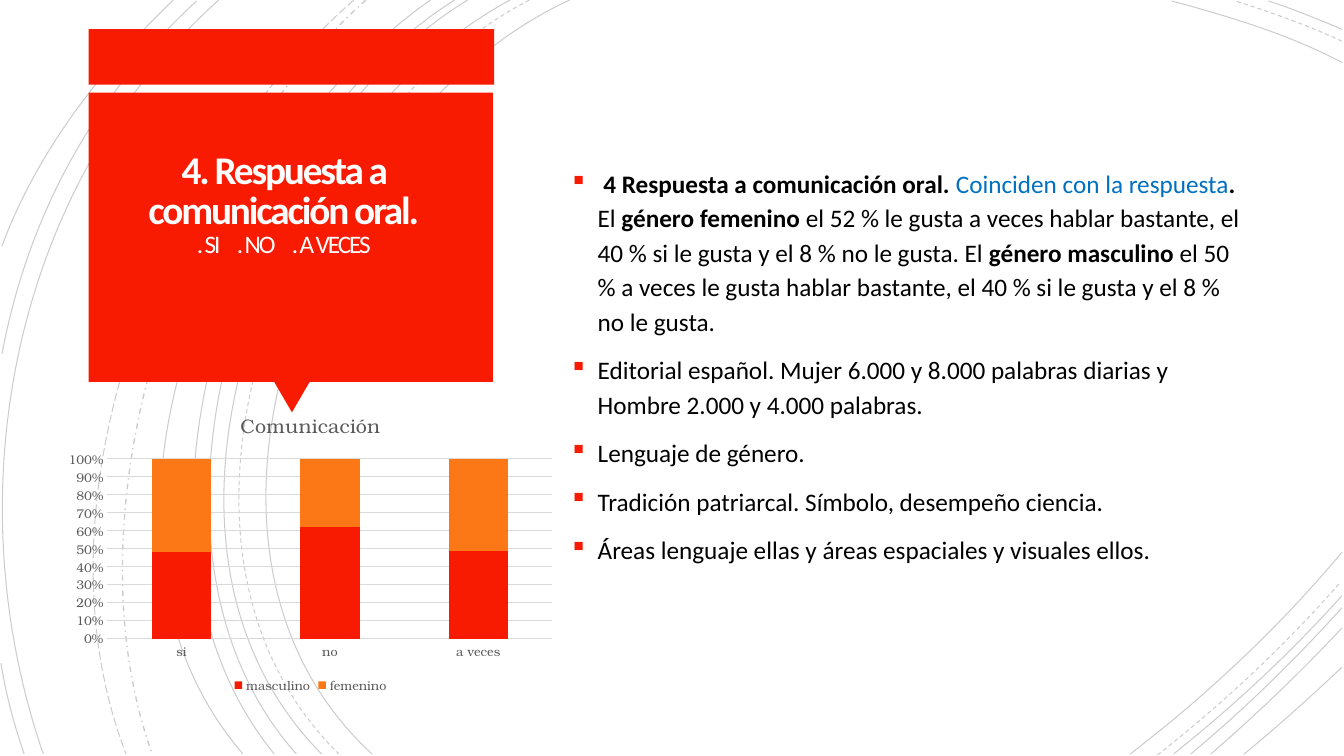
"""Build the slide on answers about oral communication by gender."""
import pptx
import pptx.chart.data
import pptx.dml.color
import pptx.enum.chart
import pptx.enum.dml
import pptx.enum.shapes
import pptx.enum.text
import pptx.util
from lxml import etree
from pptx.oxml.ns import qn

PX = 9144
RED, ORANGE, GREY, RULE, BLACK = "F81B02", "FC7715", "595959", "D9D9D9", "000000"
SERIF = "TeX Gyre Bonum"


def color(code):
    return pptx.dml.color.RGBColor.from_string(code)


def add_run(paragraph, text, size, code, bold, spacing=0):
    run = paragraph.add_run()
    run.text = text
    run.font.name = "Calibri"
    run.font.size = pptx.util.Pt(size)
    run.font.color.rgb = color(code)
    run.font.bold = bold
    if spacing:
        run.font._element.set("spc", str(spacing))


presentation = pptx.Presentation()
presentation.slide_width = 1333 * PX
presentation.slide_height = 750 * PX
slide = presentation.slides.add_slide(presentation.slide_layouts[6])
shapes = slide.shapes

DASH = pptx.enum.dml.MSO_LINE
arcs = [
    ((565, 0), (315, 115), (143, 540), (369, 748), DASH.SOLID),
    ((1331, 62), (1278, 34), (1218, 16), (1162, 1), DASH.SOLID),
    ((1121, 748), (1197, 690), (1269, 622), (1331, 548), DASH.SOLID),
    ((525, 0), (285, 125), (123, 537), (336, 748), DASH.DASH),
    ((1331, 41), (1297, 25), (1260, 12), (1225, 1), DASH.DASH),
    ((1148, 749), (1213, 698), (1275, 640), (1330, 577), DASH.DASH),
    ((506, 0), (270, 127), (110, 537), (319, 748), DASH.SOLID),
    ((1331, 29), (1307, 19), (1283, 9), (1258, 1), DASH.SOLID),
    ((1164, 748), (1223, 701), (1280, 648), (1331, 591), DASH.SOLID),
    ((464, 0), (244, 133), (110, 541), (294, 748), DASH.SOLID),
    ((1181, 748), (1234, 704), (1284, 655), (1331, 603), DASH.SOLID),
    ((451, 0), (231, 138), (97, 533), (272, 748), DASH.SOLID),
    ((1201, 748), (1246, 709), (1290, 667), (1331, 623), DASH.SOLID),
    ((427, 0), (217, 147), (53, 529), (241, 748), DASH.SOLID),
    ((1234, 748), (1267, 721), (1299, 692), (1331, 662), DASH.SOLID),
    ((363, 0), (176, 166), (65, 509), (151, 748), DASH.DASH_DOT),
    ((351, 0), (157, 169), (29, 499), (125, 748), DASH.LONG_DASH),
    ((217, 0), (11, 185), (-46, 490), (43, 748), DASH.SOLID),
    ((195, 1), (92, 96), (28, 214), (2, 351), DASH.SOLID),
    ((1, 658), (6, 689), (14, 719), (24, 748), DASH.SOLID),
    ((172, 0), (100, 69), (37, 150), (2, 244), DASH.SOLID),
]
for start, pull_out, pull_in, end, dash in arcs:
    builder = shapes.build_freeform(*start, scale=PX)
    builder.add_line_segments((pull_out, pull_in, end), close=False)
    arc = builder.convert_to_shape()
    segments = list(arc._element.iter(qn("a:lnTo")))
    curve = etree.SubElement(segments[0].getparent(), qn("a:cubicBezTo"))
    for segment in segments:
        curve.append(segment[0])
        segment.getparent().remove(segment)
    arc.shadow.inherit = False
    arc.fill.background()
    arc.line.color.rgb = color(BLACK)
    arc.line.width = pptx.util.Pt(1 if dash == DASH.DASH_DOT else 0.75)
    arc.line.dash_style = dash
    ink = arc.line._ln.find(".//" + qn("a:srgbClr"))
    etree.SubElement(ink, qn("a:alpha"), val="20000")

PRESET = pptx.enum.shapes.MSO_SHAPE
for preset, left, top, width, height, turn in (
    (PRESET.RECTANGLE, 88, 29, 402, 55, 0),
    (PRESET.ISOSCELES_TRIANGLE, 272, 379, 35, 30, 180),
    (PRESET.RECTANGLE, 88, 92, 401, 287, 0),
):
    banner = shapes.add_shape(preset, left * PX, top * PX, width * PX, height * PX)
    banner.rotation = turn
    banner.shadow.inherit = False
    banner.fill.solid()
    banner.fill.fore_color.rgb = color(RED)
    banner.line.fill.background()

MIDDLE = pptx.enum.text.MSO_ANCHOR.MIDDLE
heading = shapes.add_textbox(90 * PX, 93 * PX, 383 * PX, 269 * PX).text_frame
heading.word_wrap = True
heading.vertical_anchor = MIDDLE
heading.margin_left = heading.margin_right = heading.margin_top = 25 * PX
heading.margin_bottom = 72 * PX
question = heading.paragraphs[0]
question.alignment = pptx.enum.text.PP_ALIGN.CENTER
question.line_spacing = 0.85
add_run(question, "4. Respuesta a comunicación oral.", 28, "FFFEFF", True, -150)
question.add_line_break()
for text, spacing in ((". SI", -150), (" ", 750), (". NO", -150), (" ", 750),
                      (". A VECES", -150)):
    add_run(question, text, 18, "FFFEFF", False, spacing)

findings = [
    [
        (" ", BLACK, False),
        ("4 Respuesta a comunicación oral. ", BLACK, True),
        ("Coinciden con la respuesta", "0070C0", False),
        (". ", BLACK, True),
        ("El ", BLACK, False),
        ("género femenino", BLACK, True),
        (" el 52 % le gusta a veces hablar bastante, el 40 % si le gusta y el 8 % "
         "no le gusta. El ", BLACK, False),
        ("género masculino", BLACK, True),
        (" el 50 % a veces le gusta hablar bastante, el 40 % si le gusta y el 8 % "
         "no le gusta.", BLACK, False),
    ],
    [("Editorial español. Mujer 6.000 y 8.000 palabras diarias y Hombre 2.000 y "
      "4.000 palabras.", BLACK, False)],
    [("Lenguaje de género.", BLACK, False)],
    [("Tradición patriarcal. Símbolo, desempeño ciencia.", BLACK, False)],
    [("Áreas lenguaje ellas y áreas espaciales y visuales ellos.", BLACK, False)],
]
body = shapes.add_textbox(558 * PX, 31 * PX, 687 * PX, 661 * PX).text_frame
body.word_wrap = True
body.vertical_anchor = MIDDLE
for index, finding in enumerate(findings):
    paragraph = body.add_paragraph() if index else body.paragraphs[0]
    paragraph.line_spacing = 1.14
    paragraph.space_before = pptx.util.Pt(10)
    layout = paragraph._p.get_or_add_pPr()
    layout.set("marL", str(25 * PX))
    layout.set("indent", str(-25 * PX))
    bullet_color = etree.SubElement(layout, qn("a:buClr"))
    etree.SubElement(bullet_color, qn("a:srgbClr"), val=RED)
    etree.SubElement(layout, qn("a:buSzPct"), val="110000")
    etree.SubElement(layout, qn("a:buFont"), typeface="Wingdings", charset="2")
    etree.SubElement(layout, qn("a:buChar"), char="§")
    for text, code, bold in finding:
        add_run(paragraph, text, 18, code, bold)

answers = pptx.chart.data.CategoryChartData()
answers.categories = ["si", "no", "a veces"]
answers.add_series("masculino", (48, 62, 49))
answers.add_series("femenino", (52, 38, 51))
chart = shapes.add_chart(
    pptx.enum.chart.XL_CHART_TYPE.COLUMN_STACKED_100,
    58 * PX, 392 * PX, 500 * PX, 300 * PX, answers).chart
chart.font.name = SERIF
chart.font.size = pptx.util.Pt(10)
chart.font.color.rgb = color(BLACK)

chart.has_title = True
caption = chart.chart_title.text_frame.paragraphs[0].add_run()
caption.text = "Comunicación"
chart.has_legend = True
chart.legend.position = pptx.enum.chart.XL_LEGEND_POSITION.BOTTOM
chart.legend.include_in_layout = False
responses, shares = chart.category_axis, chart.value_axis
for font, size in ((caption.font, 14), (chart.legend.font, 9),
                   (responses.tick_labels.font, 9), (shares.tick_labels.font, 9)):
    font.name = SERIF
    font.size = pptx.util.Pt(size)
    font.bold = False
    font.color.rgb = color(GREY)

for axis in (responses, shares):
    axis.major_tick_mark = axis.minor_tick_mark = pptx.enum.chart.XL_TICK_MARK.NONE
for line in (responses.format.line, shares.major_gridlines.format.line):
    line.color.rgb = color(RULE)
    line.width = pptx.util.Pt(0.75)
shares.format.line.fill.background()
shares.major_unit = 0.1
shares.tick_labels.number_format = "0%"
shares.tick_labels.number_format_is_linked = False

columns = chart.plots[0]
columns.vary_by_categories = False
columns.gap_width = 150
columns.overlap = 100
for gender, code in zip(columns.series, (RED, ORANGE)):
    gender.format.fill.solid()
    gender.format.fill.fore_color.rgb = color(code)

presentation.save("out.pptx")
